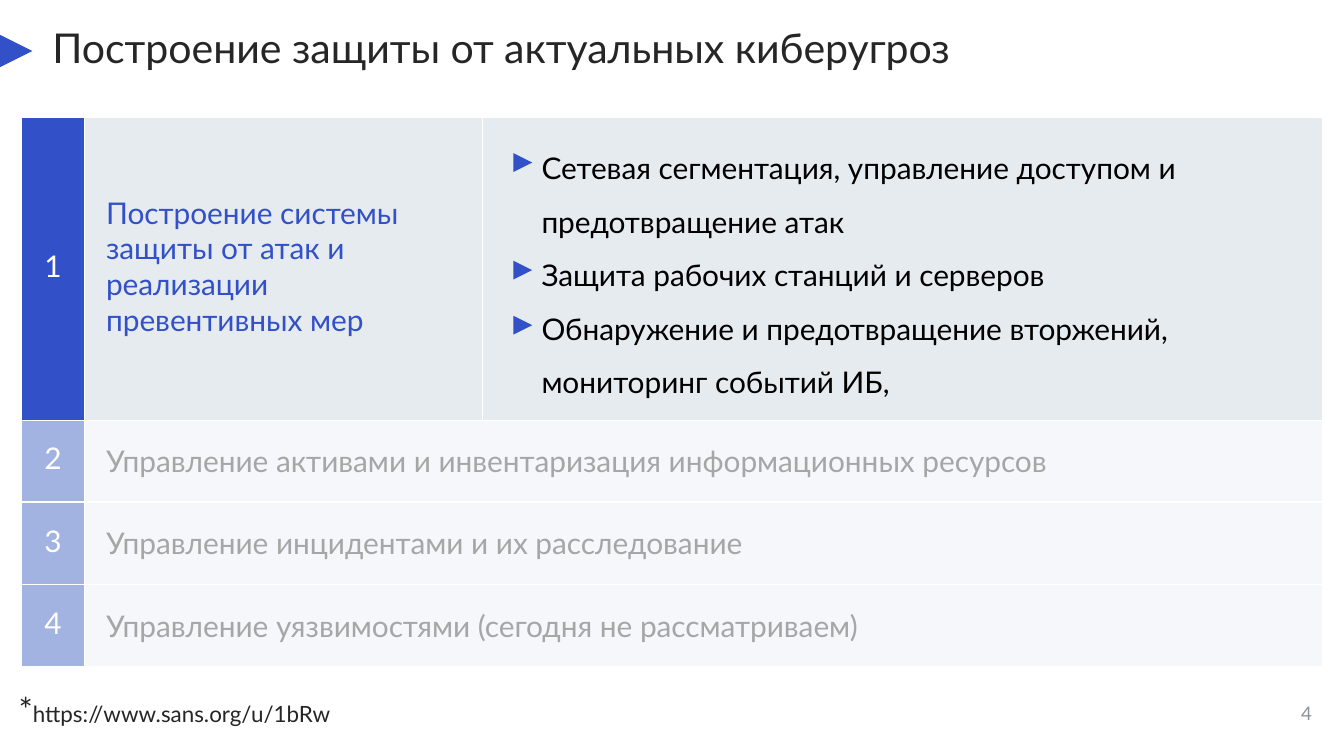
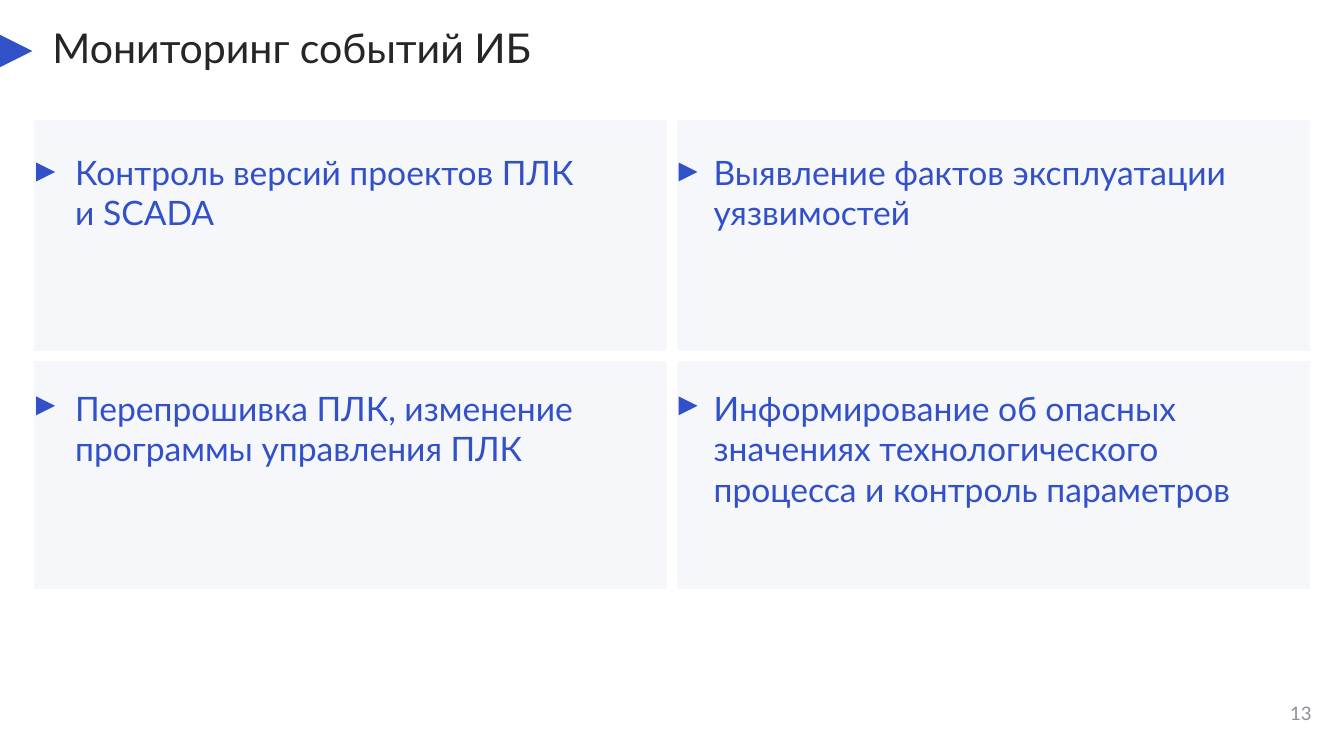
from dataclasses import dataclass
from itertools import product
from typing import NamedTuple, Optional, Union

from lxml import etree
from pptx import Presentation
from pptx import util as u
from pptx.dml.color import RGBColor
from pptx.enum import shapes, text
from pptx.oxml.ns import qn

PX = 4572
FONT = "Lato"
COLORS = {
    "blue": "3250C8",
    "pale_blue": "A2B3E2",
    "panel": "E6EBF0",
    "light": "F5F7FA",
    "ink": "262626",
    "black": "000000",
    "white": "FFFFFF",
    "muted": "A6A6A6",
    "number": "8C9196",
}


class Box(NamedTuple):
    """Place and size in px."""
    x: int
    y: int
    w: int
    h: int


class Insets(NamedTuple):
    """Inner margins in px: left, top, right, bottom."""
    left: int = 0
    top: int = 0
    right: int = 0
    bottom: int = 0


class Run(NamedTuple):
    """A piece of text in one style."""
    text: str
    size: int
    color: str


@dataclass(frozen=True)
class Para:
    """A paragraph made of runs."""
    runs: tuple[Run, ...]
    align: Optional[text.PP_ALIGN] = None
    spacing: Union[float, u.Pt, None] = None
    indent: int = 0


@dataclass(frozen=True)
class Cell:
    """A filled table cell."""
    paras: tuple[Para, ...]
    fill: str
    insets: Insets
    anchor: text.MSO_ANCHOR = text.MSO_ANCHOR.MIDDLE


@dataclass(frozen=True)
class Grid:
    """A table with white rules between its cells."""
    x: int
    y: int
    cols: tuple[int, ...]
    rows: tuple[int, ...]
    cells: tuple[tuple[Cell, ...], ...]
    rule_pt: int
    outer: bool


def px(n: int) -> u.Emu:
    """Turn px into EMU."""
    return u.Emu(n * PX)


def rgb(name: str) -> RGBColor:
    """Look up a colour."""
    return RGBColor.from_string(COLORS[name])


def para(words: str, size: int, color: str, **style) -> Para:
    """Make a paragraph of a single run."""
    return Para((Run(words, size, color),), **style)


def write(tf, paras: tuple[Para, ...]) -> None:
    """Fill a text frame with paragraphs."""
    for i, item in enumerate(paras):
        p = tf.add_paragraph() if i else tf.paragraphs[0]
        if item.indent:
            pPr = p._p.get_or_add_pPr()
            pPr.set("marL", str(px(item.indent)))
            pPr.set("indent", "0")
        if item.align is not None:
            p.alignment = item.align
        if item.spacing is not None:
            p.line_spacing = item.spacing
        for run in item.runs:
            r = p.add_run()
            r.text = run.text
            r.font.name = FONT
            r.font.size = u.Pt(run.size)
            r.font.color.rgb = rgb(run.color)


def set_insets(target, insets: Insets) -> None:
    """Set the margins of a text frame or a cell."""
    for side, value in insets._asdict().items():
        setattr(target, f"margin_{side}", px(value))


def add_text(s, box: Box, item: Para, anchor=text.MSO_ANCHOR.TOP,
             insets: Insets = Insets()):
    """Add a wrapping text box and return its frame."""
    tf = s.shapes.add_textbox(*map(px, box)).text_frame
    tf.word_wrap = True
    tf.vertical_anchor = anchor
    set_insets(tf, insets)
    write(tf, (item,))
    return tf


def add_marker(s, x: int, y: int, size: int = 28) -> None:
    """Add a blue triangle pointing right."""
    sp = s.shapes.add_shape(shapes.MSO_SHAPE.ISOSCELES_TRIANGLE,
                            px(x), px(y), px(size), px(size))
    sp.rotation = 90
    sp.shadow.inherit = False
    sp.fill.solid()
    sp.fill.fore_color.rgb = rgb("blue")
    sp.line.fill.background()


def add_rule(cell, side: str, width_pt: int) -> None:
    """Draw a white border on one side of a cell."""
    ln = etree.SubElement(cell._tc.get_or_add_tcPr(), qn(f"a:ln{side}"),
                          w=str(u.Pt(width_pt)))
    fill = etree.SubElement(ln, qn("a:solidFill"))
    etree.SubElement(fill, qn("a:srgbClr"), val=COLORS["white"])


def add_grid(s, grid: Grid) -> None:
    """Add a table."""
    n_rows, n_cols = len(grid.rows), len(grid.cols)
    table = s.shapes.add_table(
        n_rows, n_cols, px(grid.x), px(grid.y),
        px(sum(grid.cols)), px(sum(grid.rows))).table
    table.first_row = table.horz_banding = False
    for col, width in zip(table.columns, grid.cols):
        col.width = px(width)
    for row, height in zip(table.rows, grid.rows):
        row.height = px(height)
    for i, j in product(range(n_rows), range(n_cols)):
        item, cell = grid.cells[i][j], table.cell(i, j)
        inner = {"L": j > 0, "R": j < n_cols - 1,
                 "T": i > 0, "B": i < n_rows - 1}
        for side, is_inner in inner.items():
            if grid.outer or is_inner:
                add_rule(cell, side, grid.rule_pt)
        cell.fill.solid()
        cell.fill.fore_color.rgb = rgb(item.fill)
        cell.vertical_anchor = item.anchor
        set_insets(cell, item.insets)
        write(cell.text_frame, item.paras)


def add_slide(prs, title: str, number: int):
    """Add a slide with its title, title marker and number."""
    s = prs.slides.add_slide(prs.slide_layouts[6])
    add_text(s, Box(1874, 1000, 78, 78),
             para(str(number), 10, "number", align=text.PP_ALIGN.RIGHT),
             text.MSO_ANCHOR.BOTTOM)
    add_marker(s, 0, 52, 48)
    add_text(s, Box(78, 40, 1464, 142),
             para(title, 22, "ink", spacing=u.Pt(24)))
    return s


def number_cell(number: int, fill: str) -> Cell:
    """Make a step number cell."""
    return Cell((para(str(number), 16, "white", align=text.PP_ALIGN.CENTER),),
                fill, Insets(bottom=8))


def build_protection(prs) -> None:
    """Build the slide of the four protection steps."""
    s = add_slide(prs, "Построение защиты от актуальных киберугроз", 4)
    left, top, number_w, first_h, step_h = 32, 174, 94, 452, 123
    steps = (
        "Управление активами и инвентаризация информационных ресурсов",
        "Управление инцидентами и их расследование",
        "Управление уязвимостями (сегодня не рассматриваем)",
    )
    measures = (
        "Сетевая сегментация, управление доступом и предотвращение атак",
        "Защита рабочих станций и серверов",
        "Обнаружение и предотвращение вторжений, мониторинг событий ИБ,",
    )
    add_grid(s, Grid(
        left, top + first_h - 2, (number_w, 1842), (step_h,) * len(steps),
        tuple((number_cell(n, "pale_blue"),
               Cell((para(step, 16, "muted"),), "light",
                    Insets(left=32, right=32)))
              for n, step in enumerate(steps, 2)),
        rule_pt=1, outer=True))
    goal = "Построение системы защиты от атак и реализации превентивных мер"
    insets = Insets(left=32, right=32, bottom=8)
    add_grid(s, Grid(
        left, top, (number_w, 592, 1250), (first_h,),
        ((number_cell(1, "blue"),
          Cell((para(goal, 16, "blue"),), "panel", insets),
          Cell(tuple(para(m, 16, "black", spacing=1.5, indent=56)
                     for m in measures), "panel", insets)),),
        rule_pt=1, outer=True))
    for y in (228, 388, 470):
        add_marker(s, 764, y)
    note = Para((Run("*", 18, "ink"),
                 Run("https://www.sans.org/u/1bRw", 12, "ink")))
    tf = add_text(s, Box(8, 1016, 1954, 80), note, text.MSO_ANCHOR.MIDDLE,
                  Insets(20, 10, 20, 10))
    tf.auto_size = text.MSO_AUTO_SIZE.SHAPE_TO_FIT_TEXT


def build_monitoring(prs) -> None:
    """Build the slide of the four monitoring tasks."""
    s = add_slide(prs, "Мониторинг событий ИБ", 13)
    tasks = (
        (("Контроль версий проектов ПЛК", "и SCADA"),
         ("Выявление фактов эксплуатации уязвимостей",)),
        (("Перепрошивка ПЛК, изменение программы управления ПЛК",),
         ("Информирование об опасных значениях технологического "
          "процесса и контроль параметров",)),
    )
    add_grid(s, Grid(
        50, 178, (950, 950), (352, 348),
        tuple(tuple(Cell(tuple(para(line, 18, "blue") for line in lines),
                         "light", Insets(62, 48, 48, 48), text.MSO_ANCHOR.TOP)
                    for lines in row)
              for row in tasks),
        rule_pt=6, outer=False))
    for y, x in product((242, 590), (54, 1010)):
        add_marker(s, x, y)


def main() -> None:
    """Build and save the presentation."""
    prs = Presentation()
    prs.slide_width, prs.slide_height = px(2000), px(1125)
    build_protection(prs)
    build_monitoring(prs)
    prs.save("out.pptx")


if __name__ == "__main__":
    main()
